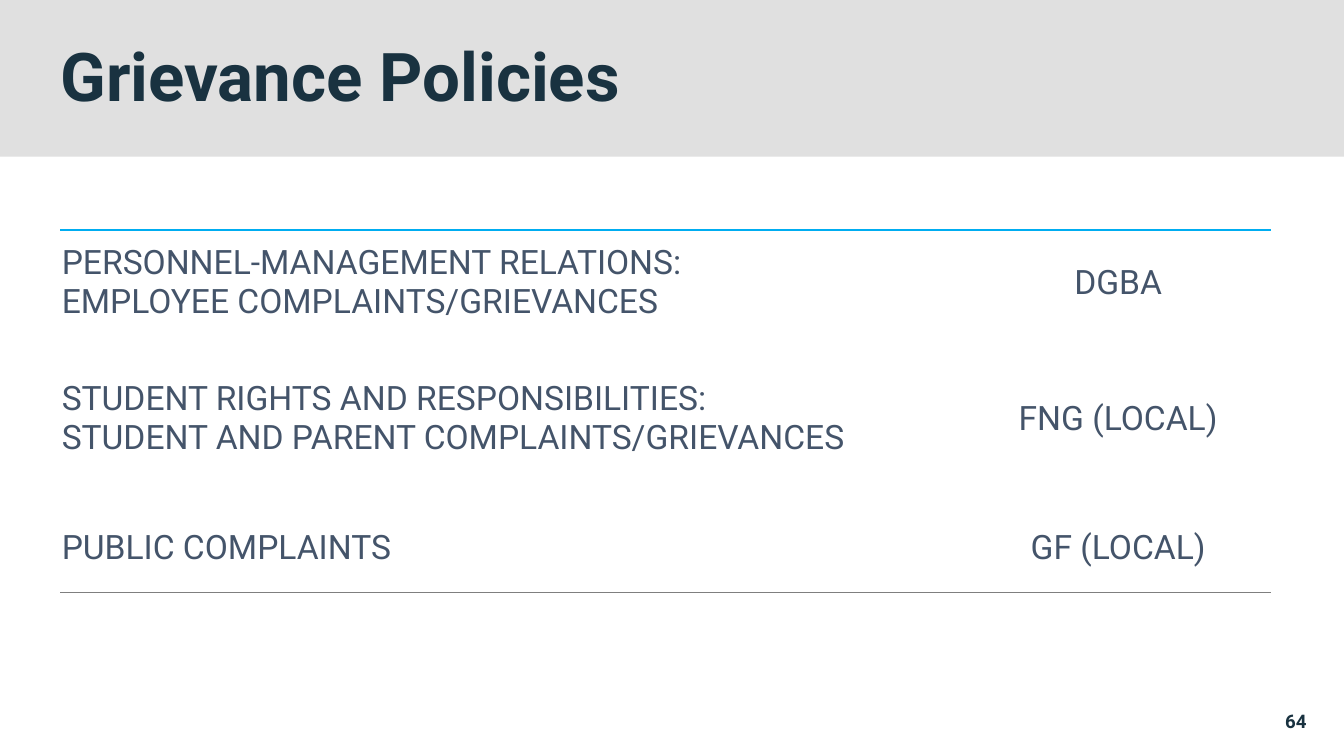
from lxml.etree import SubElement as Sub
from pptx import Presentation
from pptx.dml.color import RGBColor
from pptx.enum.shapes import MSO_SHAPE as Shape
from pptx.enum.text import MSO_ANCHOR as Anchor, PP_ALIGN as Align
from pptx.oxml.ns import qn
from pptx.util import Pt

PX = 4572  # 200 px to the inch
NAVY = RGBColor(0x19, 0x32, 0x40)
SLATE = RGBColor(0x44, 0x54, 0x6A)
BLUE = RGBColor(0x00, 0xAD, 0xF1)
GRAY = RGBColor(0x7F, 0x7F, 0x7F)
SILVER = RGBColor(0xD9, 0xD9, 0xD9)
FONT = "Roboto"

POLICIES = [
    ("PERSONNEL-MANAGEMENT RELATIONS:\nEMPLOYEE COMPLAINTS/GRIEVANCES", "DGBA"),
    ("STUDENT RIGHTS AND RESPONSIBILITIES:\n"
     "STUDENT AND PARENT COMPLAINTS/GRIEVANCES", "FNG (LOCAL)"),
    ("PUBLIC COMPLAINTS", "GF (LOCAL)"),
]


def write(frame, text, size=18, color=SLATE, bold=False, align=Align.LEFT, space=None):
    para = frame.paragraphs[0]
    para.text = text
    para.alignment = align
    para.line_spacing = space
    for run in para.runs:
        font = run.font
        font.name, font.size, font.bold = FONT, Pt(size), bold
        font.color.rgb = color


def edge(cell, side, color=None, width=1):
    """Draw one cell border, or clear it when no color is given."""
    line = Sub(cell._tc.get_or_add_tcPr(), qn("a:ln" + side), w=str(Pt(width)))
    if color is None:
        Sub(line, qn("a:noFill"))
    else:
        fill = Sub(line, qn("a:solidFill"))
        Sub(fill, qn("a:srgbClr"), val=str(color))


class Deck:
    def __init__(self, wide, high):
        self.file = Presentation()
        self.file.slide_width, self.file.slide_height = wide * PX, high * PX
        self.slide = self.file.slides.add_slide(self.file.slide_layouts[6])

    def band(self, x, y, w, h, color, alpha):
        box = self.slide.shapes.add_shape(
            Shape.RECTANGLE, x * PX, y * PX, w * PX, h * PX)
        box.shadow.inherit = False
        box.fill.solid()
        box.fill.fore_color.rgb = color
        tint = box.fill._xPr.find(".//" + qn("a:srgbClr"))
        Sub(tint, qn("a:alpha"), val=str(alpha * 1000))
        box.line.fill.background()

    def text(self, x, y, w, h, text, **style):
        frame = self.slide.shapes.add_textbox(
            x * PX, y * PX, w * PX, h * PX).text_frame
        frame.word_wrap = True
        frame.vertical_anchor = Anchor.MIDDLE
        frame.margin_left = frame.margin_right = 0
        frame.margin_top = frame.margin_bottom = 0
        write(frame, text, **style)

    def table(self, x, y, cols, rows, data):
        table = self.slide.shapes.add_table(
            len(rows), len(cols), x * PX, y * PX,
            sum(cols) * PX, sum(rows) * PX).table
        table.first_row = table.horz_banding = False
        for col, w in zip(table.columns, cols):
            col.width = w * PX
        for row, h in zip(table.rows, rows):
            row.height = h * PX
        last = len(rows) - 1
        for r, line in enumerate(data):
            for c, text in enumerate(line):
                cell = table.cell(r, c)
                cell.margin_left = cell.margin_right = cell.margin_top = 2 * PX
                cell.margin_bottom = 0
                cell.vertical_anchor = Anchor.MIDDLE
                edge(cell, "L")
                edge(cell, "R")
                edge(cell, "T", BLUE if r == 0 else None)
                edge(cell, "B", GRAY if r == last else None, 0.5)
                cell.fill.background()
                write(cell.text_frame, text,
                      align=Align.CENTER if c else Align.LEFT)


def main():
    deck = Deck(2000, 1125)

    # Header band and title
    deck.band(0, 0, 2000, 233, SILVER, 81)
    deck.text(90, 64, 1860, 110, "Grievance Policies",
              size=36, color=NAVY, bold=True, space=0.9)

    # Policy table
    deck.table(90, 342, [1346, 456], [156, 248, 136], POLICIES)

    # Page number
    deck.text(1494, 1056, 450, 34, "64",
              size=10, color=NAVY, bold=True, align=Align.RIGHT)

    deck.file.save("out.pptx")


if __name__ == "__main__":
    main()
